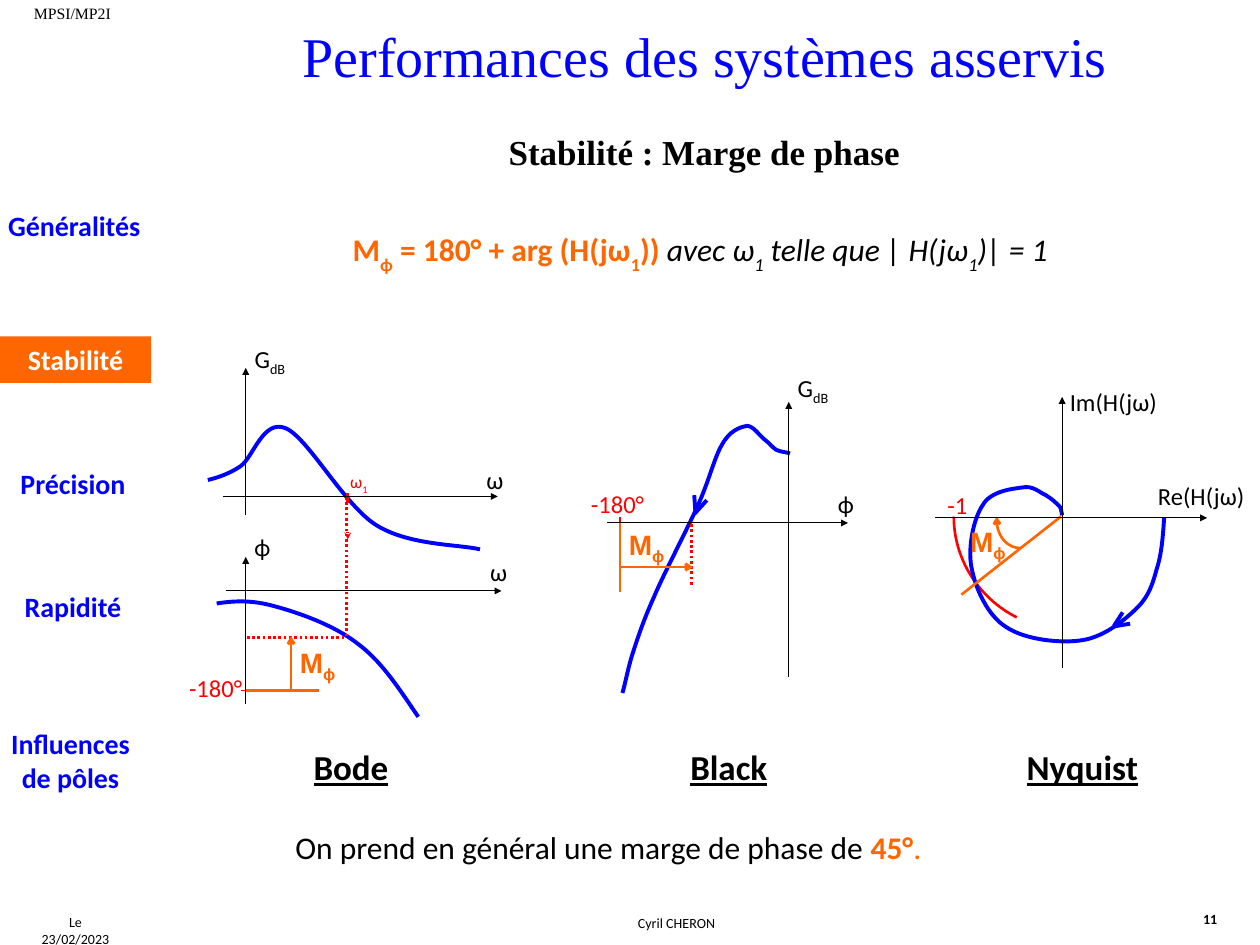
"""Builds the phase margin slide with its Bode, Black and Nyquist sketches."""
from lxml import etree
from pptx import Presentation
from pptx.dml.color import RGBColor
from pptx.enum import dml, shapes, text
from pptx.oxml.ns import qn
from pptx.util import Inches, Pt

BLUE, ORANGE, RED, BLACK, WHITE = "0000FF", "FF6600", "FF0000", "000000", "FFFFFF"
LEFT, CENTER = text.PP_ALIGN.LEFT, text.PP_ALIGN.CENTER
TIMES = "Times New Roman"
MARGIN = {"size": 16, "font": "Arial", "color": ORANGE, "bold": True}
SMALL = {"size": 8}
AXIS = {"size": 14}
RED_AXIS = {"size": 14, "color": RED}
SUB = {"base": -25}

TITLE = "Performances des systèmes asservis"
BANNERS = [
    ((0.17, 7.2, 0.86, 0.24), [("Le 23/02/2023", SMALL)], CENTER, False),
    ((1.25, 7.21, 8.24, 0.24), [("Cyril CHERON", SMALL)], CENTER, True),
    ((9.45, 7.18, 0.39, 0.24), [("11", {"size": 8, "bold": True})], LEFT, False),
    ((0.17, -0.02, 0.86, 0.25), [("MPSI/MP2I", {"size": 9, "font": TIMES})], LEFT, True),
    ((1.3, 0.99, 8.58, 0.44),
     [("Stabilité : Marge de phase", {"size": 20, "font": TIMES, "bold": True})], CENTER, True),
    ((1.67, 1.78, 7.83, 0.5), [
        ("M", {"size": 18, "color": ORANGE, "bold": True}), ("ϕ", {"base": -30}),
        (" = 180° + arg (H(jω", {"base": 0}), ("1", {"base": -30}), (")) ", {"base": 0}),
        ("avec ω", {"color": BLACK, "bold": False, "italic": True}), ("1", {"base": -30}),
        (" telle que | H(jω", {"base": 0}), ("1", {"base": -30}), (")| = 1 ", {"base": 0}),
    ], CENTER, True),
    ((2.19, 6.52, 6.83, 0.5), [
        ("\u00a0On prend en général une marge de phase de ", {"size": 18}),
        ("45°", {"color": ORANGE, "bold": True}), (".", {"bold": False}),
    ], LEFT, False),
]
MENU = [
    ("Généralités", (0.01, 1.61, 1.16, 0.37), BLUE, None),
    ("Stabilité", (0, 2.67, 1.2, 0.37), WHITE, ORANGE),
    ("Précision", (0, 3.65, 1.16, 0.37), BLUE, None),
    ("Rapidité", (0, 4.63, 1.16, 0.37), BLUE, None),
    ("Influences de pôles", (-0.02, 5.72, 1.16, 0.64), BLUE, None),
]
DIAGRAMS = [("Bode", 2.39, 0.8), ("Black", 5.38, 0.88), ("Nyquist", 8.05, 1.13)]

CURVES = [
    ([(1.72, 4.79), (1.85, 4.77), (1.99, 4.76), (2.17, 4.81), (2.36, 4.86), (2.65, 4.96),
      (2.84, 5.11), (3.03, 5.25), (3.17, 5.47), (3.32, 5.69)], BLUE, 2.25, None),
    ([(1.65, 3.81), (1.69, 3.8), (1.81, 3.77), (1.91, 3.7), (2.01, 3.63), (2.09, 3.32),
      (2.27, 3.4), (2.45, 3.48), (2.73, 4.01), (2.99, 4.17), (3.25, 4.33), (3.64, 4.32),
      (3.81, 4.36)], BLUE, 2.25, None),
    ([(6.27, 3.6), (6.26, 3.59), (6.2, 3.59), (6.16, 3.57), (6.13, 3.55), (6.11, 3.52),
      (6.07, 3.49), (6.03, 3.46), (5.98, 3.38), (5.93, 3.38), (5.87, 3.39), (5.79, 3.42),
      (5.73, 3.53), (5.67, 3.63), (5.63, 3.81), (5.54, 4.01), (5.45, 4.21), (5.27, 4.55),
      (5.19, 4.74), (5.1, 4.94), (5.06, 5.07), (5.02, 5.19), (4.98, 5.32), (4.96, 5.44),
      (4.94, 5.5)], BLUE, 2.25, None),
    ([(8.07, 4.9), (7.77, 4.75), (7.57, 4.44), (7.57, 4.1)], RED, 1.5, None),
    ([(9.24, 4.11), (9.23, 4.26), (9.22, 4.4), (9.18, 4.52), (9.15, 4.63), (9.12, 4.73),
      (9.03, 4.82), (8.93, 4.92), (8.77, 5.05), (8.6, 5.08), (8.43, 5.11), (8.14, 5.08),
      (7.99, 4.98), (7.84, 4.89), (7.74, 4.67), (7.71, 4.5), (7.68, 4.34), (7.73, 4.11),
      (7.8, 4.01), (7.86, 3.9), (8.03, 3.88), (8.11, 3.87), (8.2, 3.85), (8.25, 3.91),
      (8.3, 3.93), (8.35, 3.96), (8.38, 3.99), (8.41, 4.02), (8.43, 4.04), (8.42, 4.07),
      (8.43, 4.09)], BLUE, 2.25, None),
    ([(8.1, 4.35), (8, 4.35), (7.91, 4.25), (7.91, 4.13), (7.91, 4.12), (7.91, 4.11),
      (7.91, 4.1)], ORANGE, 1.5, "arrow"),
]
DOTTED = [(1.96, 5.06, 2.75, 5.06), (2.75, 5.05, 2.75, 3.95), (5.49, 4.64, 5.49, 4.15)]
MARKS = [
    ((1.91, 5.48, 2, 5.48), RED, 0.75, None),
    ((2.76, 4.22, 2.76, 4.28), RED, 1.5, "stealth"),
    ((2.76, 3.99, 2.76, 3.91), RED, 1.5, None),
    ((4.92, 4.1, 4.92, 4.19), RED, 1.5, None),
    ((1.95, 5.48, 2.53, 5.48), ORANGE, 1.5, None),
    ((2.31, 5.48, 2.31, 5.05), ORANGE, 1.5, "arrow"),
    ((4.92, 4.15, 4.92, 4.7), ORANGE, 1.5, None),
    ((4.92, 4.5, 5.5, 4.5), ORANGE, 1.5, "arrow"),
    ((8.42, 4.1, 7.63, 4.72), ORANGE, 1.5, None),
    ((5.52, 4.07, 5.51, 3.93), BLUE, 2.25, None),
    ((5.51, 4.08, 5.61, 3.97), BLUE, 2.25, None),
    ((8.84, 4.97, 8.91, 4.86), BLUE, 2.25, None),
    ((8.85, 4.97, 8.97, 4.95), BLUE, 2.25, None),
]
AXES = [
    (1.77, 3.94, 3.95, 3.94), (1.95, 4.09, 1.95, 2.92), (1.79, 4.69, 3.98, 4.69),
    (1.95, 5.59, 1.95, 4.42), (4.82, 4.15, 6.73, 4.15), (6.26, 5.37, 6.26, 3.19),
    (7.42, 4.11, 9.58, 4.11), (8.43, 5.3, 8.43, 3.15),
]
GAIN = [("G", AXIS), ("dB", SUB)]
PHASE_MARGIN = [("M", MARGIN), ("ϕ", SUB)]
LABELS = [
    ((1.5, 5.34, 0.75, 0.23), [("-180°", RED_AXIS)], None),
    ((2.78, 3.74, 0.17, 0.19), [("ω", {"size": 10, "color": RED}), ("1", SUB)], None),
    ((4.69, 3.88, 0.72, 0.23), [("-180°", RED_AXIS)], None),
    ((7.52, 3.89, 0.2, 0.23), [("-1", RED_AXIS)], None),
    ((2.38, 5.12, 0.41, 0.25), PHASE_MARGIN, None),
    ((4.99, 4.19, 0.49, 0.25), PHASE_MARGIN, None),
    ((7.7, 4.16, 0.48, 0.25), PHASE_MARGIN, None),
    ((3.86, 3.69, 0.16, 0.25), [("ω", AXIS)], None),
    ((3.89, 4.42, 0.16, 0.25), [("ω", AXIS)], None),
    ((2.02, 4.22, 0.16, 0.25), [("ϕ", AXIS)], WHITE),
    ((6.65, 3.88, 0.16, 0.25), [("ϕ", AXIS)], WHITE),
    ((2.02, 2.73, 0.31, 0.25), GAIN, WHITE),
    ((6.33, 2.96, 0.31, 0.25), GAIN, WHITE),
    ((9.19, 3.82, 0.79, 0.25), [("Re(H(jω)", AXIS)], WHITE),
    ((8.49, 3.07, 0.79, 0.25), [("Im(H(jω)", AXIS)], WHITE),
]


def paint(color_format, color):
    color_format.rgb = RGBColor.from_string(color)


def write(shape, runs, align=LEFT, wrap=True, insets=(0.1, 0.05)):
    frame = shape.text_frame
    frame.word_wrap = wrap
    fit = text.MSO_AUTO_SIZE
    frame.auto_size = fit.SHAPE_TO_FIT_TEXT if any(insets) else fit.NONE
    frame.vertical_anchor = text.MSO_ANCHOR.TOP
    frame.margin_left = frame.margin_right = Inches(insets[0])
    frame.margin_top = frame.margin_bottom = Inches(insets[1])
    paragraph = frame.paragraphs[0]
    paragraph.alignment = align
    style = {"font": "Calibri", "color": BLACK, "bold": False}
    for words, changes in runs:
        style = {**style, **changes}
        run = paragraph.add_run()
        run.text = words
        font = run.font
        font.name, font.size = style["font"], Pt(style["size"])
        font.bold, font.italic = style["bold"], style.get("italic", False)
        font.underline = style.get("underline", False)
        paint(font.color, style["color"])
        if style.get("base"):
            font._element.set("baseline", str(style["base"] * 1000))


def add_label(slide, box, runs, fill=None, **layout):
    place = [Inches(length) for length in box]
    if fill:
        label = slide.shapes.add_shape(shapes.MSO_SHAPE.RECTANGLE, *place)
        label.shadow.inherit = False
        label.fill.solid()
        paint(label.fill.fore_color, fill)
        label.line.fill.background()
    else:
        label = slide.shapes.add_textbox(*place)
    write(label, runs, **layout)


def stroke(shape, color, width, arrow=None):
    paint(shape.line.color, color)
    shape.line.width = Pt(width)
    if arrow:
        etree.SubElement(shape.line._get_or_add_ln(), qn("a:tailEnd"),
                         type=arrow, w="sm", len="sm")


def add_line(slide, ends, color, width, arrow=None, dotted=False):
    line = slide.shapes.add_connector(
        shapes.MSO_CONNECTOR.STRAIGHT, *[Inches(end) for end in ends])
    stroke(line, color, width, arrow)
    if dotted:
        line.line.dash_style = dml.MSO_LINE.ROUND_DOT
    etree.SubElement(line._element.spPr, qn("a:effectLst"))


def add_curve(slide, points, color, width, arrow):
    start, *controls = [(Inches(x), Inches(y)) for x, y in points]
    builder = slide.shapes.build_freeform(*start)
    builder.add_line_segments(controls, close=False)
    curve = builder.convert_to_shape()
    segments = list(curve._element.iter(qn("a:lnTo")))
    for first in range(0, len(segments), 3):
        bend = etree.SubElement(segments[first].getparent(), qn("a:cubicBezTo"))
        for segment in segments[first:first + 3]:
            bend.append(segment[0])
            segment.getparent().remove(segment)
    curve.shadow.inherit = False
    curve.fill.background()
    stroke(curve, color, width, arrow)


def main():
    deck = Presentation()
    deck.slide_width, deck.slide_height = Inches(10), Inches(7.5)
    slide = deck.slides.add_slide(deck.slide_layouts[5])
    title = slide.shapes.title
    title.left, title.top, title.width, title.height = map(Inches, (2.17, 0.12, 6.85, 0.64))
    write(title, [(TITLE, {"size": 32, "font": TIMES, "color": BLUE})], CENTER, False)
    for box, runs, align, wrap in BANNERS:
        add_label(slide, box, runs, align=align, wrap=wrap)
    for name, box, color, fill in MENU:
        add_label(slide, box, [(name, {"size": 16, "color": color, "bold": True})], fill,
                  align=CENTER, insets=(0.04, 0.05))
    for curve in CURVES:
        add_curve(slide, *curve)
    for ends in DOTTED:
        add_line(slide, ends, RED, 1.5, dotted=True)
    for mark in MARKS:
        add_line(slide, *mark)
    for box, runs, fill in LABELS:
        add_label(slide, box, runs, fill, insets=(0, 0))
    for ends in AXES:
        add_line(slide, ends, BLACK, 0.5, "triangle")
    for name, left, width in DIAGRAMS:
        add_label(slide, (left, 5.87, width, 0.43),
                  [(name, {"size": 20, "bold": True, "underline": True})], wrap=False)
    deck.save("out.pptx")


if __name__ == "__main__":
    main()
